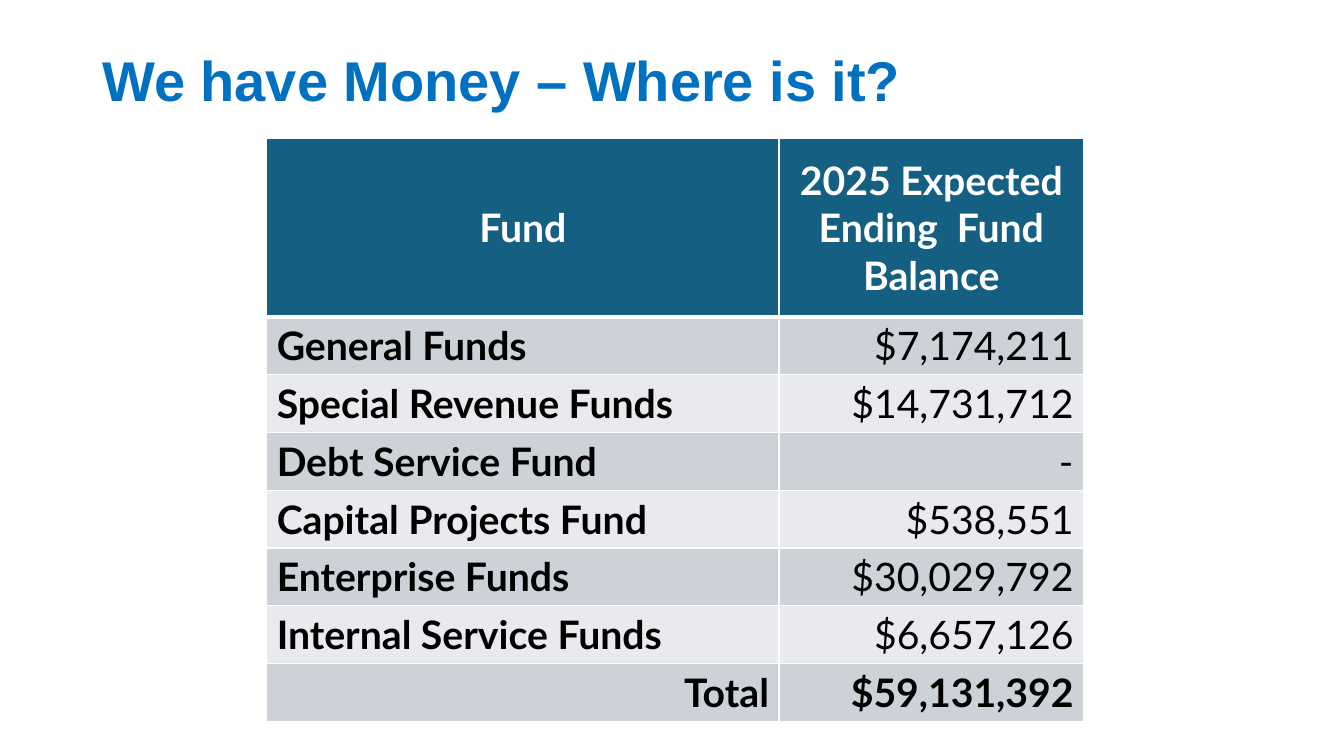
from dataclasses import dataclass

from lxml import etree
from pptx import Presentation
from pptx import util as u
from pptx.dml.color import RGBColor
from pptx.enum import text
from pptx.oxml import ns

EMU_PER_PX = 9525
HEADERS = ("Fund", "2025 Expected Ending  Fund Balance")
FUNDS = (
    ("General Funds", "$7,174,211"),
    ("Special Revenue Funds", "$14,731,712"),
    ("Debt Service Fund", "-"),
    ("Capital Projects Fund", "$538,551"),
    ("Enterprise Funds", "$30,029,792"),
    ("Internal Service Funds", "$6,657,126"),
)
TOTAL = ("Total", "$59,131,392")
COLUMN_WIDTHS = (488, 290)
HEADER_HEIGHT = 170
ROW_HEIGHT = 55


@dataclass(frozen=True)
class Theme:
    title_color: str = "0070C0"
    header_fill: str = "156082"
    bands: tuple = ("CCD2D8", "E8EAED")
    white: str = "FFFFFF"
    black: str = "000000"
    title_font: str = "Arial"
    table_font: str = "Lato"
    title_size: int = 40
    table_size: int = 28


THEME = Theme()


def px(length):
    return u.Emu(length * EMU_PER_PX)


def style_paragraph(paragraph, font_name, size, color, bold, alignment):
    paragraph.alignment = alignment
    font = paragraph.font
    font.name = font_name
    font.size = u.Pt(size)
    font.bold = bold
    font.color.rgb = RGBColor.from_string(color)


def add_title(slide, words, left, top, width, height):
    shape = slide.shapes.add_textbox(px(left), px(top), px(width), px(height))
    frame = shape.text_frame
    frame.word_wrap = True
    frame.vertical_anchor = text.MSO_ANCHOR.MIDDLE
    frame.text = words
    paragraph = frame.paragraphs[0]
    paragraph.line_spacing = 0.9
    style_paragraph(paragraph, THEME.title_font, THEME.title_size,
                    THEME.title_color, True, text.PP_ALIGN.LEFT)


def set_borders(cell, top, bottom):
    properties = cell._tc.get_or_add_tcPr()
    widths = {"lnL": 1, "lnR": 1, "lnT": top, "lnB": bottom}
    for index, (side, points) in enumerate(widths.items()):
        line = etree.Element(ns.qn(f"a:{side}"), w=str(u.Pt(points)))
        fill = etree.SubElement(line, ns.qn("a:solidFill"))
        etree.SubElement(fill, ns.qn("a:srgbClr"), val=THEME.white)
        properties.insert(index, line)


def fill_cell(cell, words, fill, color, bold, alignment):
    cell.fill.solid()
    cell.fill.fore_color.rgb = RGBColor.from_string(fill)
    cell.text = words
    style_paragraph(cell.text_frame.paragraphs[0], THEME.table_font,
                    THEME.table_size, color, bold, alignment)


def add_fund_table(slide, left, top):
    rows = (HEADERS, *FUNDS, TOTAL)
    height = HEADER_HEIGHT + ROW_HEIGHT * (len(rows) - 1)
    table = slide.shapes.add_table(
        len(rows), len(COLUMN_WIDTHS), px(left), px(top),
        px(sum(COLUMN_WIDTHS)), px(height)).table
    for column, width in zip(table.columns, COLUMN_WIDTHS):
        column.width = px(width)
    for row_index, values in enumerate(rows):
        is_header = row_index == 0
        is_total = values is TOTAL
        table.rows[row_index].height = px(HEADER_HEIGHT if is_header else ROW_HEIGHT)
        for column_index, words in enumerate(values):
            cell = table.cell(row_index, column_index)
            is_label = column_index == 0
            if is_header:
                cell.vertical_anchor = text.MSO_ANCHOR.MIDDLE
                fill_cell(cell, words, THEME.header_fill, THEME.white, True,
                          text.PP_ALIGN.CENTER)
            else:
                left_aligned = is_label and not is_total
                fill_cell(cell, words, THEME.bands[(row_index - 1) % 2],
                          THEME.black, is_label or is_total,
                          text.PP_ALIGN.LEFT if left_aligned else text.PP_ALIGN.RIGHT)
            set_borders(cell, top=3 if row_index == 1 else 1,
                        bottom=3 if is_header else 1)


def main():
    presentation = Presentation()
    presentation.slide_width = px(1280)
    presentation.slide_height = px(720)
    slide = presentation.slides.add_slide(presentation.slide_layouts[6])
    add_fund_table(slide, 254, 132)
    add_title(slide, "We have Money – Where is it?", 88, 10, 1104, 139)
    presentation.save("out.pptx")


if __name__ == "__main__":
    main()
